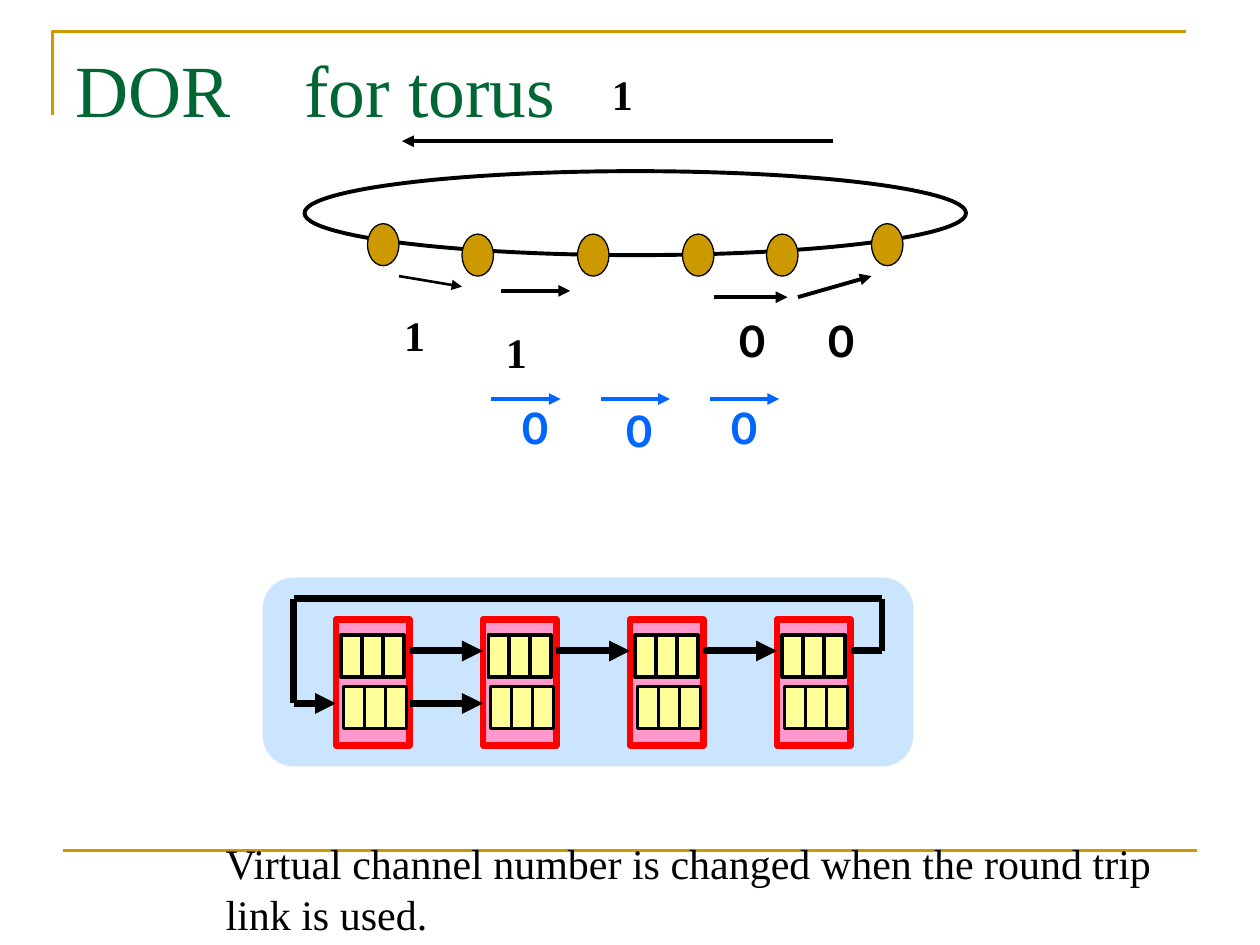
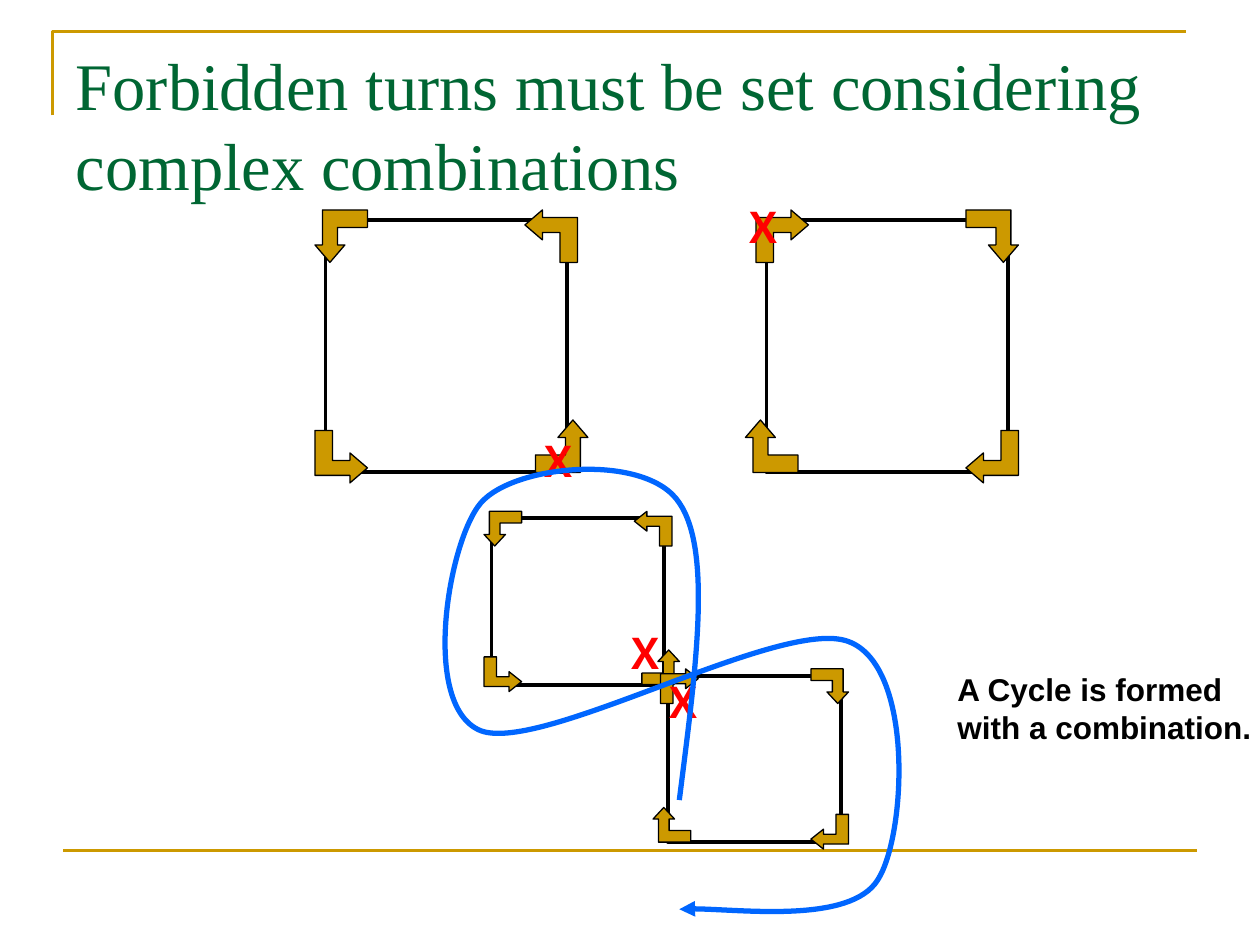
import pptx
import pptx.util
import pptx.dml.color
import pptx.enum.shapes
import pptx.enum.text
import pptx.oxml
import pptx.oxml.ns
import lxml.etree

GOLD, GREEN, BLUE, RED, BLACK = "CC9900", "006633", "0066FF", "FF0000", "000000"
SERIF, SANS = "Times New Roman", "Arial"
COLUMNS, ROWS = 120, 90
PRESET = pptx.enum.shapes.MSO_SHAPE
STRAIGHT = pptx.enum.shapes.MSO_CONNECTOR.STRAIGHT
color = pptx.dml.color.RGBColor.from_string
qn = pptx.oxml.ns.qn

deck = pptx.Presentation()
deck.slide_width = pptx.util.Inches(10)
deck.slide_height = pptx.util.Inches(7.5)
CELL = deck.slide_width / COLUMNS


def grid(*cells):
    return [pptx.util.Emu(round(cell * CELL)) for cell in cells]


def paint(shape, fill=None, line=None, width=0.75, arrow=False):
    if hasattr(shape, "fill"):
        shape.shadow.inherit = False
        if fill:
            shape.fill.solid()
            shape.fill.fore_color.rgb = color(fill)
        else:
            shape.fill.background()
    if line:
        shape.line.color.rgb = color(line)
        shape.line.width = pptx.util.Pt(width)
    else:
        shape.line.fill.background()
    properties = shape.element.spPr
    if arrow:
        lxml.etree.SubElement(properties.find(qn("a:ln")), qn("a:tailEnd"), type="triangle")
    if properties.find(qn("a:effectLst")) is None:
        lxml.etree.SubElement(properties, qn("a:effectLst"))
    return shape


layout = deck.slide_layouts[5]
heading = layout.placeholders[0]
heading.left, heading.top, heading.width, heading.height = grid(6, 3.6, 108, 15)
torus = deck.slides.add_slide(layout)
turns = deck.slides.add_slide(layout)

corner = torus.shapes.build_freeform(*grid(5, 11), scale=1.0)
corner.add_line_segments([grid(5, 3), grid(113, 3)], close=False)
bottom_rule = torus.shapes.add_connector(STRAIGHT, *grid(6, 81, 114, 81))
for frame_part in (corner.convert_to_shape(), bottom_rule):
    layout.shapes.element.append(paint(frame_part, None, GOLD, 1.5).element)

for slide, wording, size in (
    (torus, "DOR　for torus", 42),
    (turns, "Forbidden turns must be set considering complex combinations", 38),
):
    title = slide.shapes.title.text_frame
    title.auto_size = pptx.enum.text.MSO_AUTO_SIZE.NONE
    title.vertical_anchor = pptx.enum.text.MSO_ANCHOR.TOP
    title.paragraphs[0].alignment = pptx.enum.text.PP_ALIGN.LEFT
    run = title.paragraphs[0].add_run()
    run.text = wording
    run.font.name, run.font.size = SERIF, pptx.util.Pt(size)
    run.font.color.rgb = color(GREEN)

paint(torus.shapes.add_shape(PRESET.OVAL, *grid(29, 16.3, 63, 8)), None, BLACK, 2.25)
for column, row in ((35, 21.3), (44, 22.3), (55, 22.3), (65, 22.3), (73, 22.3), (83, 21.3)):
    paint(torus.shapes.add_shape(PRESET.OVAL, *grid(column, row, 3, 4)), GOLD, BLACK)

panel = paint(torus.shapes.add_shape(PRESET.ROUNDED_RECTANGLE, *grid(25, 55, 62, 18)), "99CCFF")
panel.adjustments[0] = 0.167
panel_color = panel.element.spPr.find(".//" + qn("a:srgbClr"))
lxml.etree.SubElement(panel_color, qn("a:alpha"), val="50000")
routers = [32 + 14 * index for index in range(4)]
for router in routers:
    paint(torus.shapes.add_shape(PRESET.RECTANGLE, *grid(router, 59, 7, 12)), "FF99CC", RED, 3.75)
    for indent, row in ((0.5, 60.5), (0.7, 65.4)):
        for slot in range(3):
            buffer_box = grid(router + indent + 2 * slot, row, 2, 4)
            paint(torus.shapes.add_shape(PRESET.RECTANGLE, *buffer_box), "FFFF99", BLACK, 2)

links = [
    ((68, 28.3, 75, 28.3), BLACK, 2.25, True),
    ((76, 28.3, 83, 26.3), BLACK, 2.25, True),
    ((79.3, 13.45, 38.3, 13.45), BLACK, 2.25, True),
    ((38, 26.3, 44, 27.3), BLACK, 1.5, True),
    ((47.7, 27.7, 54.3, 27.7), BLACK, 2.25, True),
    ((84, 62, 81, 62), BLACK, 4, False),
    ((84, 62, 84, 57), BLACK, 4, False),
    ((84, 57, 28, 57), BLACK, 4, False),
    ((28, 57, 28, 67), BLACK, 4, False),
    ((28, 67, 32, 67), BLACK, 4, True),
    ((39, 67, 46, 67), BLACK, 4, True),
]
links += [((46.8 + 10.4 * hop, 38, 53.4 + 10.4 * hop, 38), BLUE, 2.25, True) for hop in range(3)]
links += [((router + 7, 62, router + 14, 62), BLACK, 4, True) for router in routers[:3]]
for ends, tint, width, arrow in links:
    paint(torus.shapes.add_connector(STRAIGHT, *grid(*ends)), None, tint, width, arrow)

bent_arrow = [(5 / 7, 0), (3 / 7, 1 / 3), (4 / 7, 1 / 3), (4 / 7, 2 / 3), (0, 2 / 3),
              (0, 1), (6 / 7, 1), (6 / 7, 1 / 3), (1, 1 / 3)]
corner_turns = [
    (21, 20, bent_arrow),
    (0, 21, [(1 - v, u) for u, v in bent_arrow]),
    (20, 0, [(v, 1 - u) for u, v in bent_arrow]),
    (0, 0, [(1 - u, 1 - v) for u, v in bent_arrow]),
]
RING, TURN = 26, 5
for left, top, across, down, mirrored in (
    (30, 20, 1, 1, False),
    (71, 20, 1, 1, True),
    (46.1, 48.7, 0.716, 0.66, False),
    (62.2, 63.7, 0.716, 0.66, True),
):
    square_left = RING - 24 if mirrored else 1
    square = grid(left + square_left * across, top + down, 23 * across, 24 * down)
    paint(turns.shapes.add_shape(PRESET.RECTANGLE, *square), None, BLACK, 2.25)
    for column, row, outline in corner_turns:
        points = []
        for u, v in outline:
            x = column + TURN * u
            x = RING - x if mirrored else x
            points.append(grid(left + x * across, top + (row + TURN * v) * down))
        turn = turns.shapes.build_freeform(*points[0], scale=1.0)
        turn.add_line_segments(points[1:], close=True)
        paint(turn.convert_to_shape(), GOLD, BLACK)

for slide, wording, box, tint, size, font, bold in (
    (torus, "1", (57.1, 5.9, 4.4, 6), BLACK, 24, SERIF, True),
    (torus, "1", (37.3, 28.9, 4.4, 6), BLACK, 24, SERIF, True),
    (torus, "1", (47, 30.5, 4.4, 6), BLACK, 24, SERIF, True),
    (torus, "０", (68.5, 29.5, 5.2, 6), BLACK, 24, SERIF, True),
    (torus, "０", (77, 29.5, 5.2, 6), BLACK, 24, SERIF, True),
    (torus, "０", (47.8, 37.7, 5.2, 6), BLUE, 24, SERIF, True),
    (torus, "０", (57.7, 38, 5.2, 6), BLUE, 24, SERIF, True),
    (torus, "０", (67.7, 37.7, 5.2, 6), BLUE, 24, SERIF, True),
    (torus, "Virtual channel number is changed when the round trip\nlink is used.",
     (20.3, 79.2, 90.7, 10.8), BLACK, 24, SERIF, False),
    (turns, "Ｘ", (50, 40.9, 6.5, 6), RED, 24, SERIF, True),
    (turns, "Ｘ", (69.5, 18.6, 6.5, 6), RED, 24, SERIF, True),
    (turns, "Ｘ", (61.9, 63.8, 6.5, 6), RED, 24, SERIF, True),
    (turns, "Ｘ", (58.3, 59.2, 6.5, 6), RED, 24, SERIF, True),
    (turns, "A Cycle is formed\nwith a combination.", (90, 63.2, 30.4, 8.4), BLACK, 18, SANS, True),
):
    label = slide.shapes.add_textbox(*grid(*box)).text_frame
    label.word_wrap = False
    label.auto_size = pptx.enum.text.MSO_AUTO_SIZE.SHAPE_TO_FIT_TEXT
    for index, sentence in enumerate(wording.split("\n")):
        paragraph = label.add_paragraph() if index else label.paragraphs[0]
        run = paragraph.add_run()
        run.text = sentence
        run.font.name, run.font.size, run.font.bold = font, pptx.util.Pt(size), bold
        run.font.color.rgb = color(tint)

cycle_points = [
    (64.7, 76.2),
    (66.2, 64.3), (67.9, 52.6), (64.7, 47.9),
    (61.6, 43.1), (49, 44.2), (45.8, 47.9),
    (42.7, 51.5), (40, 67.3), (45.8, 69.6),
    (51.7, 71.8), (74.5, 58.7), (80.8, 61.1),
    (87.1, 63.4), (86.3, 79.6), (83.6, 83.8),
    (81, 88), (67.9, 86.3), (64.7, 86.6),
]
cycle_builder = turns.shapes.build_freeform(*grid(*cycle_points[0]), scale=1.0)
cycle_builder.add_line_segments([grid(*point) for point in cycle_points[1:]], close=False)
cycle = paint(cycle_builder.convert_to_shape(), None, BLUE, 3, True)
route = cycle.element.spPr.find(".//" + qn("a:path"))
segments = route.findall(qn("a:lnTo"))
for start in range(0, len(segments), 3):
    curve = lxml.etree.SubElement(route, qn("a:cubicBezTo"))
    for segment in segments[start:start + 3]:
        curve.append(segment[0])
        route.remove(segment)

deck.save("out.pptx")
